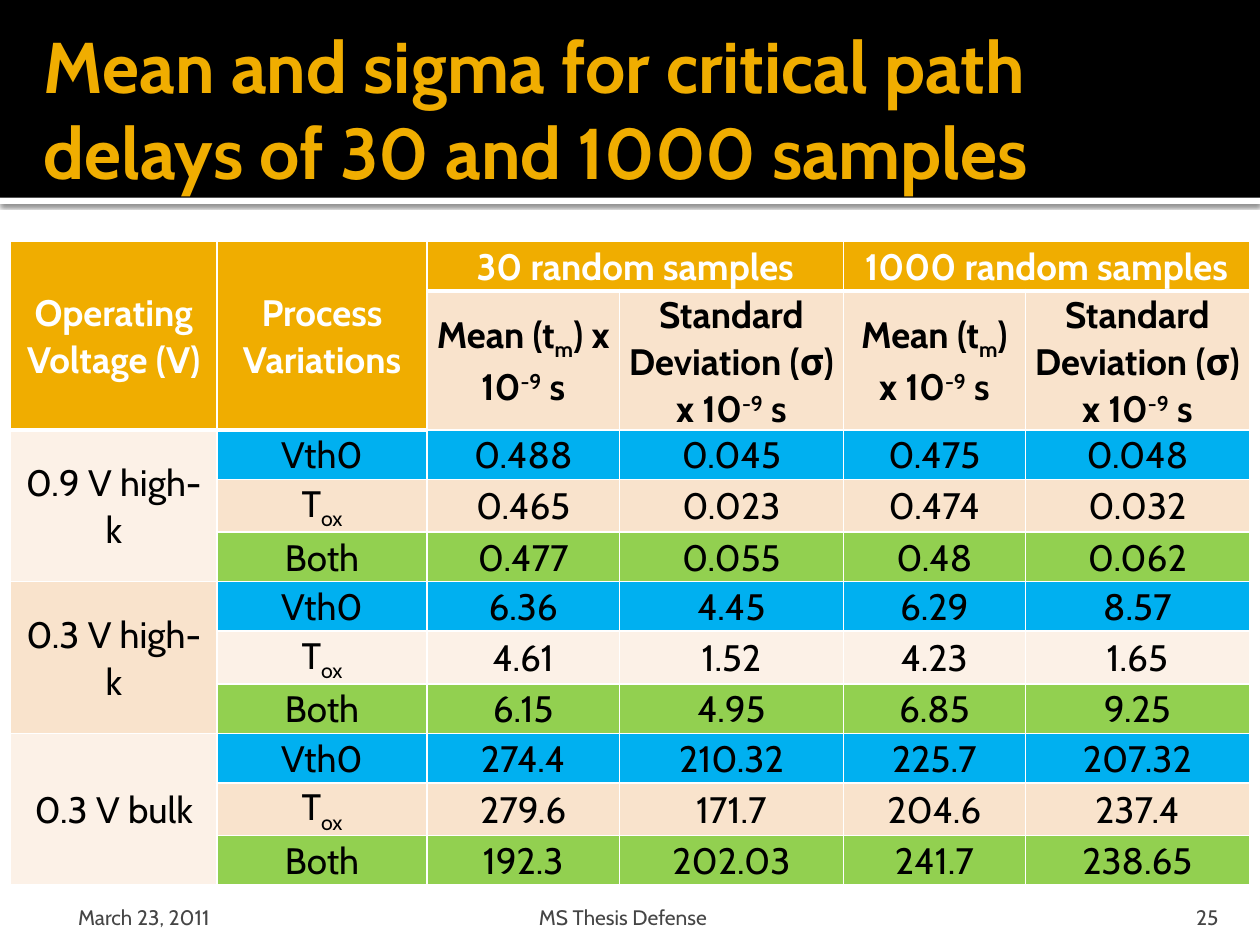
"""Build a slide with a table of critical path delay statistics."""
import lxml.etree
import pptx
import pptx.dml.color
import pptx.enum.shapes
import pptx.enum.text
import pptx.oxml
import pptx.oxml.ns
import pptx.util

Pt = pptx.util.Pt
RGBColor = pptx.dml.color.RGBColor
ALIGN = pptx.enum.text.PP_ALIGN
ANCHOR = pptx.enum.text.MSO_ANCHOR

BLACK = RGBColor(0x00, 0x00, 0x00)
WHITE = RGBColor(0xFF, 0xFF, 0xFF)
AMBER = RGBColor(0xF0, 0xAD, 0x00)
PEACH = RGBColor(0xF9, 0xE3, 0xCC)
CREAM = RGBColor(0xFC, 0xF1, 0xE7)
BLUE = RGBColor(0x00, 0xB0, 0xF0)
GREEN = RGBColor(0x92, 0xD0, 0x50)
GRAY = RGBColor(0x45, 0x45, 0x45)

SUBSCRIPT, SUPERSCRIPT = -25000, 30000
TITLE = "Mean and sigma for critical path delays of 30 and 1000 samples"
COLUMN_WIDTHS = [118, 120, 110, 128, 130, 128]
COLUMN_WIDTHS[4] = 104
ROW_HEIGHTS = [28.3, 77] + [28.3] * 9

UNIT = [("-9", SUPERSCRIPT), (" s", 0)]
MEAN = [("Mean (t", 0), ("m", SUBSCRIPT), (") x 10", 0)] + UNIT
DEVIATION = [("Standard Deviation (σ) x 10", 0)] + UNIT
VARIATIONS = [
    [("Vth0", 0)],
    [("T", 0), ("ox", SUBSCRIPT)],
    [("Both", 0)],
]
RESULTS = {
    "0.9 V high-k": [
        ("0.488", "0.045", "0.475", "0.048"),
        ("0.465", "0.023", "0.474", "0.032"),
        ("0.477", "0.055", "0.48", "0.062"),
    ],
    "0.3 V high-k": [
        ("6.36", "4.45", "6.29", "8.57"),
        ("4.61", "1.52", "4.23", "1.65"),
        ("6.15", "4.95", "6.85", "9.25"),
    ],
    "0.3 V bulk": [
        ("274.4", "210.32", "225.7", "207.32"),
        ("279.6", "171.7", "204.6", "237.4"),
        ("192.3", "202.03", "241.7", "238.65"),
    ],
}


class SlideBuilder:
    """Hold the style and the current slide."""

    font_name = "Cabin"
    table_size = 21

    def __init__(self, slide):
        self.slide = slide

    def style_run(self, run, size, color, bold=False):
        """Apply the font to a run."""
        run.font.name = self.font_name
        run.font.size = Pt(size)
        run.font.bold = bold
        run.font.color.rgb = color

    def set_margins(self, target, margins):
        """Set the left, top, right and bottom margins of a frame or cell."""
        for side, margin in zip(("left", "top", "right", "bottom"), margins):
            setattr(target, f"margin_{side}", Pt(margin))

    def band(self, top, height, color):
        """Add a rectangle across the whole slide."""
        shape = self.slide.shapes.add_shape(
            pptx.enum.shapes.MSO_SHAPE.RECTANGLE, 0, Pt(top), Pt(720), Pt(height))
        shape.shadow.inherit = False
        shape.fill.solid()
        shape.fill.fore_color.rgb = color
        shape.line.fill.background()
        return shape

    def drop_shadow(self, shape):
        """Give a shape a soft shadow below it."""
        effects = shape._element.spPr.find(pptx.oxml.ns.qn("a:effectLst"))
        effects.append(pptx.oxml.parse_xml(
            f'<a:outerShdw {pptx.oxml.ns.nsdecls("a")} blurRad="{Pt(2.5)}" '
            f'dist="{Pt(0.8)}" dir="5400000" rotWithShape="0">'
            '<a:srgbClr val="000000"><a:alpha val="60000"/></a:srgbClr></a:outerShdw>'))

    def text(self, box, text, size, color, margins, anchor, align=ALIGN.LEFT, bold=False):
        """Add a text box with one paragraph."""
        shape = self.slide.shapes.add_textbox(*map(Pt, box))
        frame = shape.text_frame
        frame.word_wrap = True
        frame.vertical_anchor = anchor
        self.set_margins(frame, margins)
        frame.text = text
        paragraph = frame.paragraphs[0]
        paragraph.alignment = align
        self.style_run(paragraph.runs[0], size, color, bold)

    def footer(self, left, width, text, margins, align):
        """Add a footer text."""
        self.text((left, 509.8, width, 21.6), text, 12, GRAY, margins, ANCHOR.BOTTOM, align)

    def table(self, left, top, widths, heights):
        """Add a table with white rules and return it."""
        table = self.slide.shapes.add_table(
            len(heights), len(widths), Pt(left), Pt(top),
            Pt(sum(widths)), Pt(sum(heights))).table
        table.first_row = table.horz_banding = False
        for column, width in zip(table.columns, widths):
            column.width = Pt(width)
        for row, height in zip(table.rows, heights):
            row.height = Pt(height)
        for index, row in enumerate(table.rows):
            for column, cell in enumerate(row.cells):
                heading = index == 0 or (index == 1 and column < 2)
                self.borders(cell, 3 if heading else 1)
        return table

    def borders(self, cell, bottom):
        """Draw the white borders of a cell."""
        properties = cell._tc.get_or_add_tcPr()
        for side, width in (("L", 1), ("R", 1), ("T", 1), ("B", bottom)):
            line = lxml.etree.SubElement(
                properties, pptx.oxml.ns.qn(f"a:ln{side}"), w=str(Pt(width)))
            fill = lxml.etree.SubElement(line, pptx.oxml.ns.qn("a:solidFill"))
            lxml.etree.SubElement(fill, pptx.oxml.ns.qn("a:srgbClr"), val=str(WHITE))

    def cell(self, cell, parts, fill, color=BLACK, bold=False):
        """Fill a cell with text parts, each with its baseline shift."""
        cell.fill.solid()
        cell.fill.fore_color.rgb = fill
        cell.vertical_anchor = ANCHOR.MIDDLE
        self.set_margins(cell, (5, 0, 5, 0))
        paragraph = cell.text_frame.paragraphs[0]
        paragraph.alignment = ALIGN.CENTER
        paragraph.line_spacing = 1.05
        for text, baseline in parts:
            run = paragraph.add_run()
            run.text = text
            self.style_run(run, self.table_size, color, bold)
            if baseline:
                run._r.get_or_add_rPr().set("baseline", str(baseline))


def fill_table(builder, table):
    """Write the headings and the results into the table."""
    headings = [
        ("Operating Voltage (V)", 0, (1, 0)),
        ("Process Variations", 1, (1, 1)),
        ("30 random samples", 2, (0, 3)),
        ("1000 random samples", 4, (0, 5)),
    ]
    for text, column, end in headings:
        table.cell(0, column).merge(table.cell(*end))
        builder.cell(table.cell(0, column), [(text, 0)], AMBER, WHITE, True)
    for column, parts in enumerate([MEAN, DEVIATION] * 2, start=2):
        builder.cell(table.cell(1, column), parts, PEACH, bold=True)

    for group, (voltage, rows) in enumerate(RESULTS.items()):
        first = 2 + 3 * group
        label_fill, middle_fill = (PEACH, CREAM) if group % 2 else (CREAM, PEACH)
        table.cell(first, 0).merge(table.cell(first + 2, 0))
        builder.cell(table.cell(first, 0), [(voltage, 0)], label_fill)
        fills = (BLUE, middle_fill, GREEN)
        for row, (variation, values, fill) in enumerate(zip(VARIATIONS, rows, fills), first):
            contents = [variation] + [[(value, 0)] for value in values]
            for column, parts in enumerate(contents, start=1):
                builder.cell(table.cell(row, column), parts, fill)


def main():
    """Build and save the presentation."""
    presentation = pptx.Presentation()
    presentation.slide_width, presentation.slide_height = Pt(720), Pt(540)
    builder = SlideBuilder(presentation.slides.add_slide(presentation.slide_layouts[6]))
    builder.drop_shadow(builder.band(113, 3.6, WHITE))
    builder.band(0, 113, BLACK)
    builder.text((18, 12.2, 648, 98.6), TITLE, 41, AMBER, (7.2, 3.6, 3.6, 3.6),
                 ANCHOR.MIDDLE, bold=True)
    fill_table(builder, builder.table(6, 138, COLUMN_WIDTHS, ROW_HEIGHTS))
    builder.footer(36, 168, "March 23, 2011", (8.6, 3.6, 3.6, 0), ALIGN.LEFT)
    builder.footer(645.8, 57.6, "25", (7.2, 3.6, 7.2, 0), ALIGN.RIGHT)
    builder.footer(208, 296, "MS Thesis Defense", (3.6, 3.6, 3.6, 0), ALIGN.CENTER)
    presentation.save("out.pptx")


if __name__ == "__main__":
    main()
